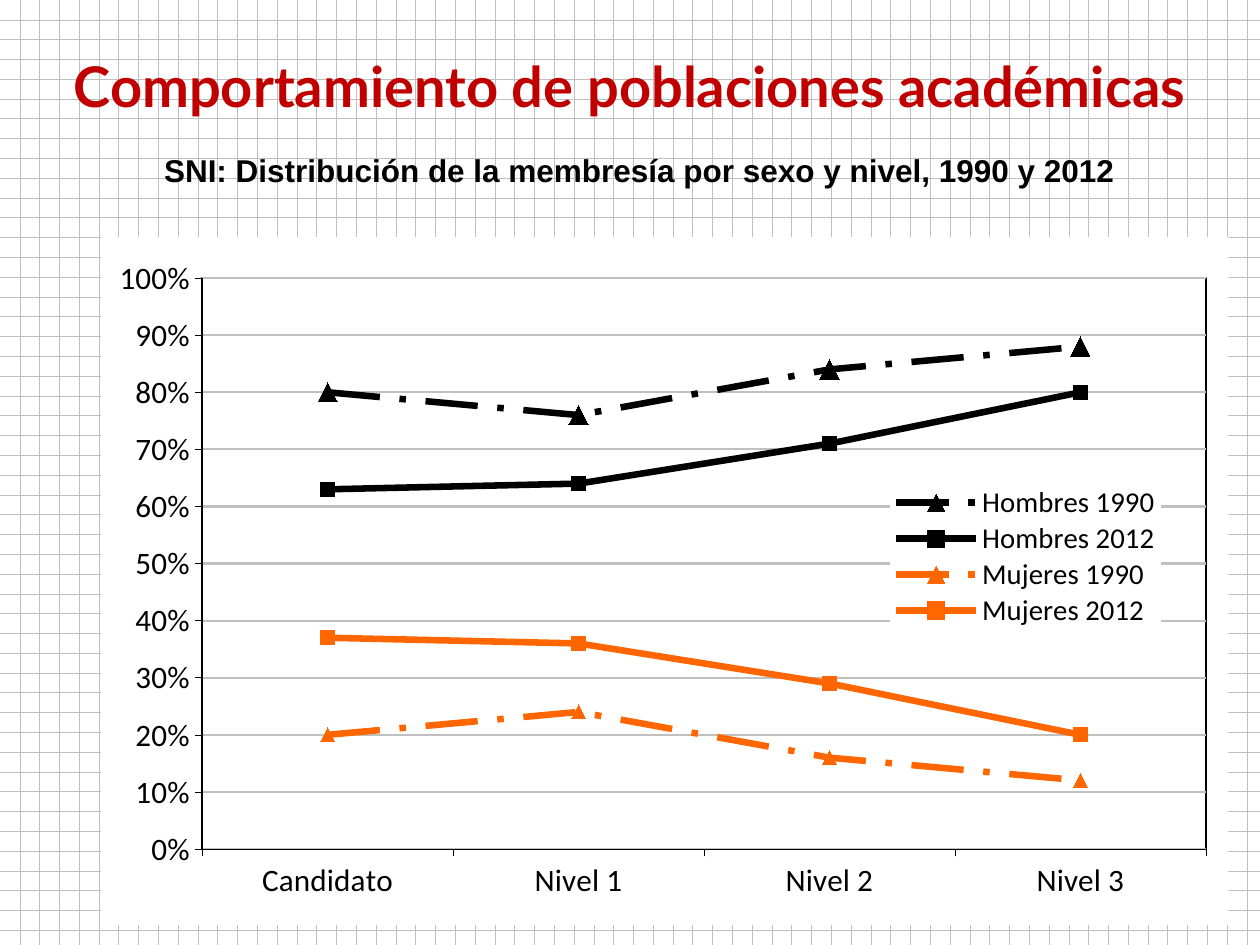
from dataclasses import dataclass

from lxml import etree
from pptx import Presentation
from pptx.chart.data import CategoryChartData
from pptx.dml.color import RGBColor as Rgb
from pptx.enum.chart import XL_CHART_TYPE as ChartType
from pptx.enum.chart import XL_LEGEND_POSITION as LegendSide
from pptx.enum.chart import XL_MARKER_STYLE as Marker
from pptx.enum.chart import XL_TICK_MARK as Tick
from pptx.enum.dml import MSO_LINE as Dash
from pptx.enum.dml import MSO_PATTERN as Pattern
from pptx.enum.text import MSO_ANCHOR as Anchor
from pptx.enum.text import PP_ALIGN as Align
from pptx.oxml import parse_xml
from pptx.oxml.ns import nsdecls, qn
from pptx.util import Inches, Pt


@dataclass(frozen=True)
class Theme:
    """Colours, fonts and type sizes of the slide."""
    red: str = "C00000"
    black: str = "000000"
    orange: str = "FF6600"
    white: str = "FFFFFF"
    dots: str = "BFBFBF"
    grid: str = "C0C0C0"
    chart_font: str = "Calibri"
    axis_size: float = 17.8
    legend_size: float = 16.4
    axis_line: float = 0.31
    grid_line: float = 1.25
    series_line: float = 3.75


THEME = Theme()

HEADINGS = [
    ("Comportamiento de poblaciones académicas",
     (0.12, 0.36, 9.76, 0.63), "Lato", 32, THEME.red),
    ("SNI: Distribución de la membresía por sexo y nivel, 1990 y 2012",
     (1.06, 1.15, 8.03, 0.4), "Arial", 18, THEME.black),
]
LEVELS = ["Candidato", "Nivel 1", "Nivel 2", "Nivel 3"]
SERIES = [
    ("Hombres 1990", (0.80, 0.76, 0.84, 0.88), THEME.black, Marker.TRIANGLE, 11, Dash.LONG_DASH_DOT),
    ("Hombres 2012", (0.63, 0.64, 0.71, 0.80), THEME.black, Marker.SQUARE, 8, Dash.SOLID),
    ("Mujeres 1990", (0.20, 0.24, 0.16, 0.12), THEME.orange, Marker.TRIANGLE, 8, Dash.LONG_DASH_DOT),
    ("Mujeres 2012", (0.37, 0.36, 0.29, 0.20), THEME.orange, Marker.SQUARE, 8, Dash.SOLID),
]
CHART_AREA = (0.8, 1.88, 8.95, 5.46)
PLOT_LAYOUT = (0.09, 0.06, 0.89, 0.83)
LEGEND_LAYOUT = (0.7, 0.36, 0.24, 0.21)


def color(value):
    return Rgb.from_string(value)


def set_font(font, name, size, value, bold=False):
    font.name, font.size, font.bold = name, Pt(size), bold
    font.color.rgb = color(value)


def set_line(line, value, width):
    line.color.rgb = color(value)
    line.width = Pt(width)


def add_heading(page, text, area, font, size, value):
    box = page.shapes.add_textbox(*map(Inches, area))
    frame = box.text_frame
    frame.word_wrap = True
    frame.vertical_anchor = Anchor.MIDDLE
    para = frame.paragraphs[0]
    para.alignment = Align.CENTER
    span = para.add_run()
    span.text = text
    set_font(span.font, font, size, value, bold=True)


def place(parent, index, layout, inner=False):
    for old in parent.findall(qn("c:layout")):
        parent.remove(old)
    element = parse_xml(f"<c:layout {nsdecls('c')}><c:manualLayout/></c:layout>")
    entries = [("layoutTarget", "inner")] if inner else []
    entries += [("xMode", "edge"), ("yMode", "edge"), *zip("xywh", layout)]
    for tag, value in entries:
        etree.SubElement(element[0], qn(f"c:{tag}")).set("val", str(value))
    parent.insert(index, element)


def area_format(line=None):
    outline = f'<a:solidFill><a:srgbClr val="{line}"/></a:solidFill>' if line else "<a:noFill/>"
    return parse_xml(
        f'<c:spPr {nsdecls("c", "a")}><a:solidFill><a:srgbClr val="{THEME.white}"/>'
        f'</a:solidFill><a:ln w="{Pt(1)}">{outline}</a:ln></c:spPr>')


def style_axes(chart):
    for axis in (chart.category_axis, chart.value_axis):
        axis.major_tick_mark, axis.minor_tick_mark = Tick.OUTSIDE, Tick.NONE
        set_font(axis.tick_labels.font, THEME.chart_font, THEME.axis_size, THEME.black)
        set_line(axis.format.line, THEME.black, THEME.axis_line)
    axis = chart.value_axis
    axis.minimum_scale, axis.maximum_scale, axis.major_unit = 0, 1, 0.1
    axis.tick_labels.number_format = "0%"
    axis.tick_labels.number_format_is_linked = False
    set_line(axis.major_gridlines.format.line, THEME.grid, THEME.grid_line)


def style_series(chart):
    for series, (_, _, value, marker, size, dash) in zip(chart.plots[0].series, SERIES):
        series.smooth = False
        set_line(series.format.line, value, THEME.series_line)
        series.format.line.dash_style = dash
        series.marker.style, series.marker.size = marker, size
        series.marker.format.fill.solid()
        series.marker.format.fill.fore_color.rgb = color(value)
        series.marker.format.line.fill.background()


def style_areas(chart):
    chart.has_legend = True
    legend = chart.legend
    legend.position = LegendSide.RIGHT
    legend.include_in_layout = False
    set_font(legend.font, THEME.chart_font, THEME.legend_size, THEME.black)
    root = chart.element
    legend_part = root.find(f".//{qn('c:legend')}")
    place(legend_part, 1, LEGEND_LAYOUT)
    legend_part.find(qn("c:overlay")).addnext(area_format())
    plot_part = root.find(f".//{qn('c:plotArea')}")
    place(plot_part, 0, PLOT_LAYOUT, inner=True)
    plot_part.append(area_format(THEME.black))
    root.find(qn("c:chart")).addnext(area_format())


def add_line_chart(page):
    data = CategoryChartData(number_format="0%")
    data.categories = LEVELS
    for name, values, *_ in SERIES:
        data.add_series(name, values)
    chart = page.shapes.add_chart(
        ChartType.LINE_MARKERS, *map(Inches, CHART_AREA), data).chart
    chart.has_title = False
    chart.plots[0].vary_by_categories = False
    set_font(chart.font, THEME.chart_font, THEME.axis_size, THEME.black)
    style_axes(chart)
    style_series(chart)
    style_areas(chart)


def main():
    """Build the slide on academic populations by sex and level."""
    deck = Presentation()
    deck.slide_width, deck.slide_height = Inches(10), Inches(7.5)
    page = deck.slides.add_slide(deck.slide_layouts[6])
    fill = page.background.fill
    fill.patterned()
    fill.pattern = Pattern.DOTTED_GRID
    fill.fore_color.rgb = color(THEME.dots)
    fill.back_color.rgb = color(THEME.white)
    title, subtitle = HEADINGS
    add_heading(page, *title)
    add_line_chart(page)
    add_heading(page, *subtitle)
    deck.save("out.pptx")


if __name__ == "__main__":
    main()
